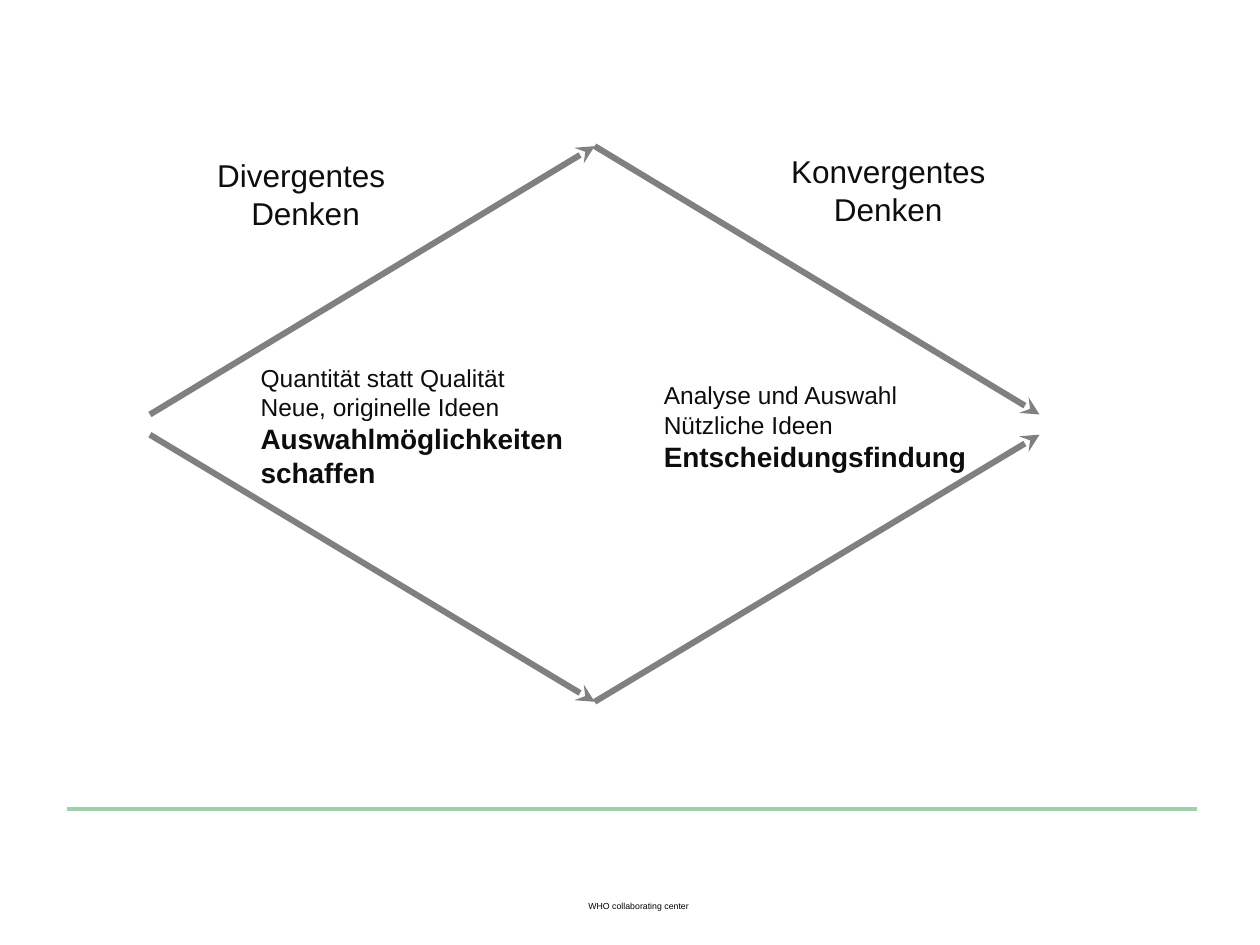
from lxml.etree import SubElement
from pptx import Presentation
from pptx.dml.color import RGBColor
from pptx.enum.shapes import MSO_CONNECTOR
from pptx.enum.text import MSO_ANCHOR, PP_ALIGN
from pptx.oxml.ns import qn
from pptx.util import Inches, Pt

WIDTH, HEIGHT = 10, 7.5
GREEN = RGBColor(0x9F, 0xD0, 0xAB)
GRAY = RGBColor(0x80, 0x80, 0x80)
INK = RGBColor(0x0D, 0x0D, 0x0D)
BLACK = RGBColor(0, 0, 0)

# Grid of the diamond: three columns, and rows with a gap at the tips
START, MIDDLE, END = 1.19, 4.72, 8.25
TOP, UPPER, LOWER, BOTTOM = 1.16, 3.29, 3.45, 5.57


def add_line(slide, start, end, color, weight, arrow=False):
    line = slide.shapes.add_connector(
        MSO_CONNECTOR.STRAIGHT, *map(Inches, start + end))
    line.line.color.rgb = color
    line.line.width = Pt(weight)
    if arrow:
        SubElement(line.line._get_or_add_ln(), qn("a:tailEnd"), type="stealth")
    SubElement(line._element.spPr, qn("a:effectLst"))


def add_text(slide, box, lines, size=18, color=INK, align=PP_ALIGN.LEFT,
             wrap=True, spacing=None, bold_from=None, bold_size=16):
    """Write one paragraph per line; lines from bold_from on are emphasised."""
    frame = slide.shapes.add_textbox(*map(Inches, box)).text_frame
    frame.word_wrap = wrap
    frame.vertical_anchor = MSO_ANCHOR.TOP
    for index, line in enumerate(lines):
        paragraph = frame.paragraphs[0] if index == 0 else frame.add_paragraph()
        paragraph.alignment = align
        if spacing:
            paragraph.line_spacing = spacing
        bold = bold_from is not None and index >= bold_from
        run = paragraph.add_run()
        run.text = line
        run.font.name = "Arial"
        run.font.size = Pt(bold_size if bold else size)
        run.font.bold = bold
        run.font.color.rgb = color


def add_diamond(slide):
    for tip, side in ((TOP, UPPER), (BOTTOM, LOWER)):
        add_line(slide, (START, side), (MIDDLE, tip), GRAY, 3.5, arrow=True)
        add_line(slide, (MIDDLE, tip), (END, side), GRAY, 3.5, arrow=True)


def main():
    deck = Presentation()
    deck.slide_width, deck.slide_height = Inches(WIDTH), Inches(HEIGHT)
    slide = deck.slides.add_slide(deck.slide_layouts[6])

    # Footer
    add_line(slide, (0.53, 6.42), (9.5, 6.42), GREEN, 2.5)
    add_text(slide, (4.3, 7.11, 1.54, 0.18), ["WHO collaborating center"],
             size=5, color=BLACK, align=PP_ALIGN.CENTER, spacing=0.9)

    # Phases of thinking
    add_diamond(slide)
    add_text(slide, (1.18, 1.19, 2.49, 0.71), ["Divergentes ", "Denken"],
             align=PP_ALIGN.CENTER)
    add_text(slide, (6.13, 1.16, 1.84, 0.71), ["Konvergentes Denken"],
             align=PP_ALIGN.CENTER)

    # Aims of each phase
    add_text(slide, (1.97, 2.83, 2.7, 1.11),
             ["Quantität statt Qualität", "Neue, originelle Ideen",
              "Auswahlmöglichkeiten", "schaffen"],
             size=14, wrap=False, bold_from=2)
    add_text(slide, (5.17, 2.97, 2.63, 0.84),
             ["Analyse und Auswahl", "Nützliche Ideen",
              "Entscheidungsfindung"],
             size=14, wrap=False, bold_from=2)

    deck.save("out.pptx")


if __name__ == "__main__":
    main()
